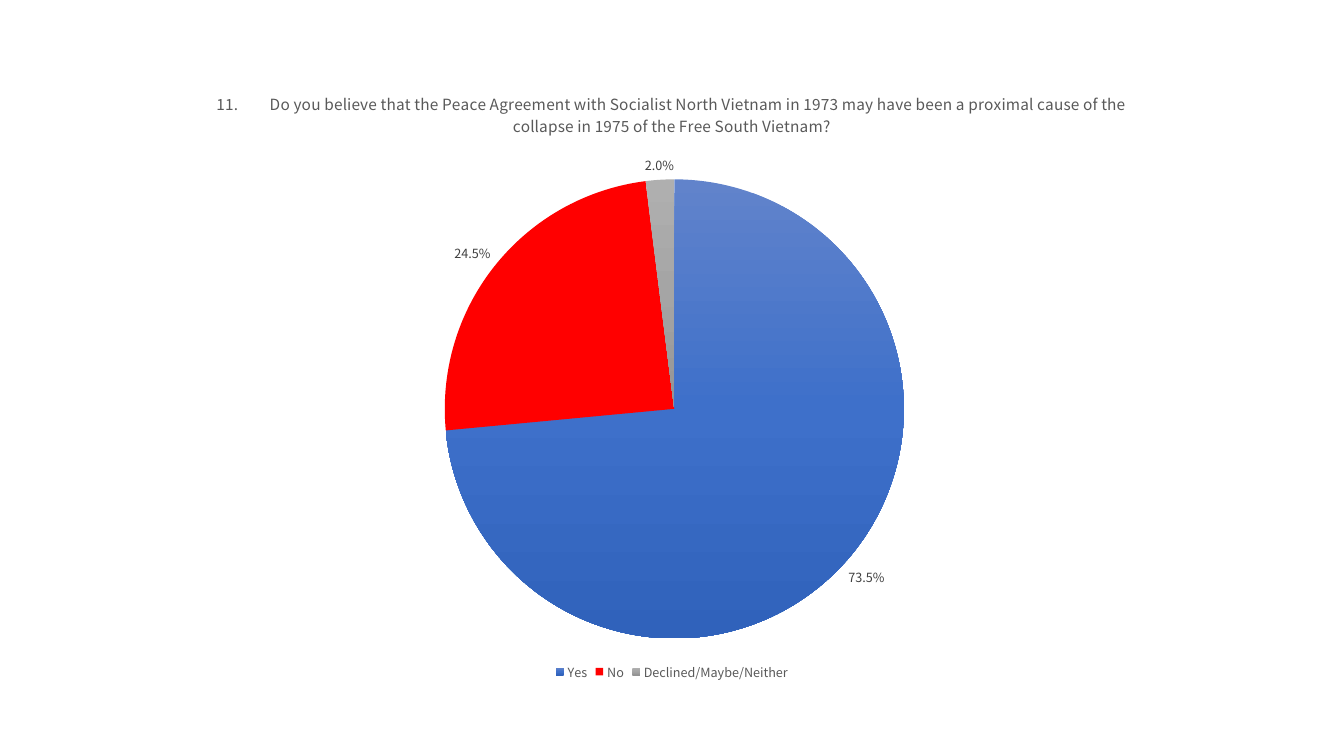
from copy import deepcopy
from dataclasses import dataclass

from pptx import Presentation
from pptx.chart.data import CategoryChartData
from pptx.dml.color import RGBColor
from pptx.enum.chart import XL_CHART_TYPE as ChartType
from pptx.enum.chart import XL_LABEL_POSITION as LabelPosition
from pptx.enum.chart import XL_LEGEND_POSITION as LegendPosition
from pptx.oxml import parse_xml
from pptx.oxml.ns import nsdecls
from pptx.util import Cm, Pt

EM_SPACE = chr(0x2003)
NUMBER = "11."
QUESTION = (
    "Do you believe that the Peace Agreement with Socialist North Vietnam "
    "in 1973 may have been a proximal cause of the collapse in 1975 "
    "of the Free South Vietnam?"
)
TITLE = NUMBER + 2 * EM_SPACE + QUESTION
ANSWERS = {"Yes": 0.735, "No": 0.245, "Declined/Maybe/Neither": 0.02}
SLIDE_SIZE = Cm(33.87), Cm(19.05)
MARGIN = Cm(1.78)
CHART_HEIGHT = Cm(15.47)
PIE_LEFT, PIE_TOP, PIE_DIAMETER = Cm(9.43), Cm(2.74), Cm(11.57)


@dataclass(frozen=True)
class Theme:
    """Colours and type of the survey chart."""

    font: str = "Noto Sans CJK KR"
    title_size: int = 11
    small_size: int = 9
    text: str = "595959"
    label: str = "404040"
    slices: tuple = (
        ("6183CB", "3E70CA", "3062BB"),
        ("FF0000",),
        ("AFAFAF", "A5A5A5", "939393"),
    )


THEME = Theme()


def set_font(font, size, colour):
    """Apply the chart typeface at a given size and colour."""
    for name, value in {"name": THEME.font, "size": Pt(size), "bold": False}.items():
        setattr(font, name, value)
    font.color.rgb = RGBColor.from_string(colour)


def fill_slice(point, colours):
    """Fill a slice with one colour or an evenly spaced downward gradient."""
    fill = point.format.fill
    point.format.line.fill.background()
    if len(colours) == 1:
        fill.solid()
        fill.fore_color.rgb = RGBColor.from_string(colours[0])
        return
    fill.gradient()
    fill.gradient_angle = 270
    stop_list = fill.gradient_stops._gsLst
    while len(stop_list) < len(colours):
        stop_list.append(deepcopy(stop_list[-1]))
    for index, (stop, colour) in enumerate(zip(fill.gradient_stops, colours)):
        stop.position = index / (len(colours) - 1)
        stop.color.rgb = RGBColor.from_string(colour)


def place_pie(chart, chart_width):
    """Fix the pie's square inside the chart frame."""
    fractions = {
        "x": PIE_LEFT / chart_width,
        "y": PIE_TOP / CHART_HEIGHT,
        "w": PIE_DIAMETER / chart_width,
        "h": PIE_DIAMETER / CHART_HEIGHT,
    }
    modes = '<c:xMode val="edge"/><c:yMode val="edge"/>'
    sizes = "".join(f'<c:{key} val="{value:.4f}"/>' for key, value in fractions.items())
    layout = parse_xml(
        f'<c:layout {nsdecls("c")}><c:manualLayout><c:layoutTarget val="inner"/>'
        f"{modes}{sizes}</c:manualLayout></c:layout>"
    )
    plot_area = chart._chartSpace.chart.plotArea
    for old_layout in plot_area.xpath("c:layout"):
        plot_area.remove(old_layout)
    plot_area.insert(0, layout)


def add_survey_chart(slide):
    """Add the pie with its question, labels and legend."""
    data = CategoryChartData(number_format="0.0%")
    data.categories = list(ANSWERS)
    data.add_series(TITLE, list(ANSWERS.values()))
    width = SLIDE_SIZE[0] - 2 * MARGIN
    chart = slide.shapes.add_chart(
        ChartType.PIE, MARGIN, MARGIN, width, CHART_HEIGHT, data
    ).chart
    set_font(chart.font, THEME.small_size, THEME.text)

    chart.has_title = True
    chart.chart_title.include_in_layout = False
    title = chart.chart_title.text_frame
    title.text = TITLE
    set_font(title.paragraphs[0].runs[0].font, THEME.title_size, THEME.text)

    chart.has_legend = True
    chart.legend.position = LegendPosition.BOTTOM
    chart.legend.include_in_layout = False
    set_font(chart.legend.font, THEME.small_size, THEME.text)

    plot = chart.plots[0]
    plot.vary_by_categories = True
    plot.has_data_labels = True
    label_format = {
        "show_value": True,
        "show_percentage": False,
        "number_format": "0.0%",
        "number_format_is_linked": False,
        "position": LabelPosition.OUTSIDE_END,
    }
    for name, value in label_format.items():
        setattr(plot.data_labels, name, value)
    set_font(plot.data_labels.font, THEME.small_size, THEME.label)

    for index, colours in enumerate(THEME.slices):
        fill_slice(plot.series[0].points[index], colours)
    place_pie(chart, width)


def main():
    """Build and save the slide."""
    presentation = Presentation()
    presentation.slide_width, presentation.slide_height = SLIDE_SIZE
    slide = presentation.slides.add_slide(presentation.slide_layouts[6])
    add_survey_chart(slide)
    presentation.save("out.pptx")


if __name__ == "__main__":
    main()
